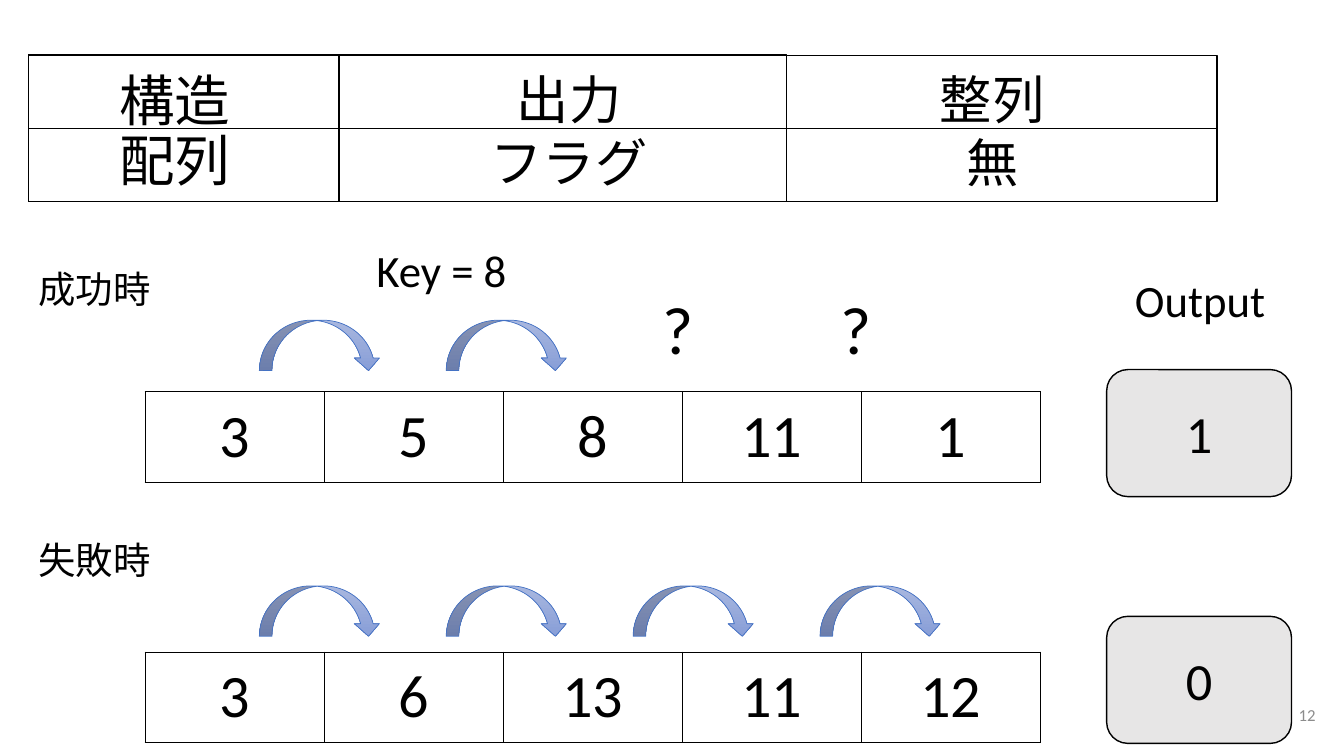
from lxml.etree import SubElement
from pptx import Presentation
from pptx.dml.color import RGBColor
from pptx.enum.shapes import MSO_CONNECTOR, MSO_SHAPE
from pptx.enum.text import MSO_ANCHOR, MSO_AUTO_SIZE, PP_ALIGN
from pptx.oxml import parse_xml
from pptx.oxml.ns import nsdecls, qn
from pptx.util import Emu, Pt

COLORS = {
    "text": "000000",
    "line": "000000",
    "output": "E7E6E6",
    "arrow_line": "4472C4",
    "arrow_top": "A8B7DF",
    "arrow_bottom": "889ED7",
    "number": "8C8C8C",
}


def px(n):
    return Emu(n * 9525)


def color(name):
    return RGBColor.from_string(COLORS[name])


def style(p, size, align=PP_ALIGN.CENTER, font="Calibri", fill="text"):
    p.alignment = align
    p.font.size = Pt(size)
    p.font.name = font
    p.font.bold = False
    p.font.color.rgb = color(fill)


def set_frame(tf, inset, anchor=MSO_ANCHOR.TOP):
    tf.word_wrap = True
    tf.auto_size = MSO_AUTO_SIZE.NONE
    tf.vertical_anchor = anchor
    tf.margin_left = tf.margin_right = px(inset)
    tf.margin_top = tf.margin_bottom = px(inset)


def add_text(slide, box, lines, size, align=PP_ALIGN.LEFT, font="Calibri", inset=None):
    tf = slide.shapes.add_textbox(*map(px, box)).text_frame
    tf.word_wrap = True
    if inset:
        set_frame(tf, inset)
    tf.text = lines
    for p in tf.paragraphs:
        style(p, size, align, font)


def add_box(slide, kind, box, line="line", width=1):
    sp = slide.shapes.add_shape(kind, *map(px, box))
    sp.shadow.inherit = False
    sp.fill.background()
    sp.line.color.rgb = color(line)
    sp.line.width = Pt(width)
    return sp


def add_header(slide, box):
    """Property grid: structure (the title), output and ordering."""
    x, y, w, h = box
    title = slide.shapes.title
    title.left, title.top, title.width, title.height = map(px, (x, y + 8, 279, 81))
    set_frame(title.text_frame, 10)
    title.text_frame.text = "構造\v配列"
    p = title.text_frame.paragraphs[0]
    style(p, 39.6)
    p.line_spacing = 0.9

    add_text(slide, (x + 307, y, 416, 89), "出力\nフラグ", 37.3, PP_ALIGN.CENTER, "Arial", 12)
    add_text(slide, (x + 752, y, 332, 81), "整列\n無", 37.3, PP_ALIGN.CENTER, "Arial", 12)

    add_box(slide, MSO_SHAPE.RECTANGLE, (x, y + 1, w, h - 1))
    divider = slide.shapes.add_connector(
        MSO_CONNECTOR.STRAIGHT, px(x), px(y + h // 2), px(x + w), px(y + h // 2))
    divider.line.color.rgb = color("line")
    divider.line.width = Pt(0.5)
    SubElement(divider._element.spPr, qn("a:effectLst"))
    for left, width in ((0, 296), (296, 426)):
        add_box(slide, MSO_SHAPE.RECTANGLE, (x + left, y, width, h))


def add_cell_borders(cell):
    tc_pr = cell._tc.get_or_add_tcPr()
    for i, side in enumerate("LRTB"):
        tc_pr.insert(i, parse_xml(
            f'<a:ln{side} {nsdecls("a")} w="6350"><a:solidFill>'
            f'<a:srgbClr val="{COLORS["line"]}"/></a:solidFill></a:ln{side}>'))


def add_array(slide, box, values):
    x, y, w, h = box
    table = slide.shapes.add_table(1, len(values), *map(px, box)).table
    table.first_row = table.horz_banding = False
    table.rows[0].height = px(h)
    for i, value in enumerate(values):
        table.columns[i].width = px(w) // len(values)
        cell = table.cell(0, i)
        cell.fill.background()
        add_cell_borders(cell)
        cell.margin_left = cell.margin_right = px(12)
        cell.margin_top = cell.margin_bottom = px(7)
        cell.vertical_anchor = MSO_ANCHOR.MIDDLE
        cell.text = str(value)
        style(cell.text_frame.paragraphs[0], 43)


def add_jump(slide, box):
    sp = add_box(slide, MSO_SHAPE.CURVED_DOWN_ARROW, box, "arrow_line", 0.5)
    sp.fill.gradient()
    sp.fill.gradient_angle = 270
    for stop, name in zip(sp.fill.gradient_stops, ("arrow_top", "arrow_bottom")):
        stop.color.rgb = color(name)


def add_search(slide, box, label, values, jumps, output, jump_y, array_y, output_y):
    """One search run; the last three lengths are offsets from the top of the box."""
    x, y, w, h = box
    add_text(slide, (x, y, 251, 53), label, 26.7)
    add_array(slide, (x + 111, y + array_y, 853, 86), values)
    for i in range(jumps):
        add_jump(slide, (x + 220 + 178 * i, y + jump_y, 116, 48))
    sp = add_box(slide, MSO_SHAPE.ROUNDED_RECTANGLE, (x + w - 176, y + output_y, 176, 121))
    sp.fill.solid()
    sp.fill.fore_color.rgb = color("output")
    tf = sp.text_frame
    tf.vertical_anchor = MSO_ANCHOR.MIDDLE
    tf.text = str(output)
    style(tf.paragraphs[0], 37.3)


def add_captions(slide, box):
    x, y, w, h = box
    add_text(slide, (x, y, 182, 61), "Key = 8", 32)
    add_text(slide, (x + w - 214, y + 29, 214, 61), "Output", 32, PP_ALIGN.CENTER)
    for left in (273, 442):
        add_text(slide, (x + left, y + 43, 70, 87), "?", 48)


def add_slide_number(slide, box):
    tf = slide.shapes.add_textbox(*map(px, box)).text_frame
    set_frame(tf, 10, MSO_ANCHOR.MIDDLE)
    p = tf.paragraphs[0]
    style(p, 12, PP_ALIGN.RIGHT, fill="number")
    p._p.append(parse_xml(
        f'<a:fld {nsdecls("a")} id="{{B6F15528-21DE-4FAA-801E-634DDDAF4B2B}}" type="slidenum">'
        f'<a:rPr lang="en-US" sz="1200"><a:solidFill><a:srgbClr val="{COLORS["number"]}"/>'
        '</a:solidFill><a:latin typeface="Calibri"/></a:rPr><a:t>12</a:t></a:fld>'))


def main():
    prs = Presentation()
    prs.slide_width, prs.slide_height = px(1280), px(720)
    prs.element.set("firstSlideNum", "12")
    slide = prs.slides.add_slide(prs.slide_layouts[5])

    add_header(slide, (27, 52, 1132, 140))
    add_captions(slide, (349, 226, 901, 130))
    add_search(slide, (27, 249, 1203, 224), "成功時", (3, 5, 8, 11, 1), 2, 1,
               jump_y=56, array_y=124, output_y=103)
    add_search(slide, (27, 507, 1203, 201), "失敗時", (3, 6, 13, 11, 12), 4, 0,
               jump_y=51, array_y=114, output_y=80)
    add_slide_number(slide, (1186, 653, 77, 55))

    prs.save("out.pptx")


if __name__ == "__main__":
    main()
